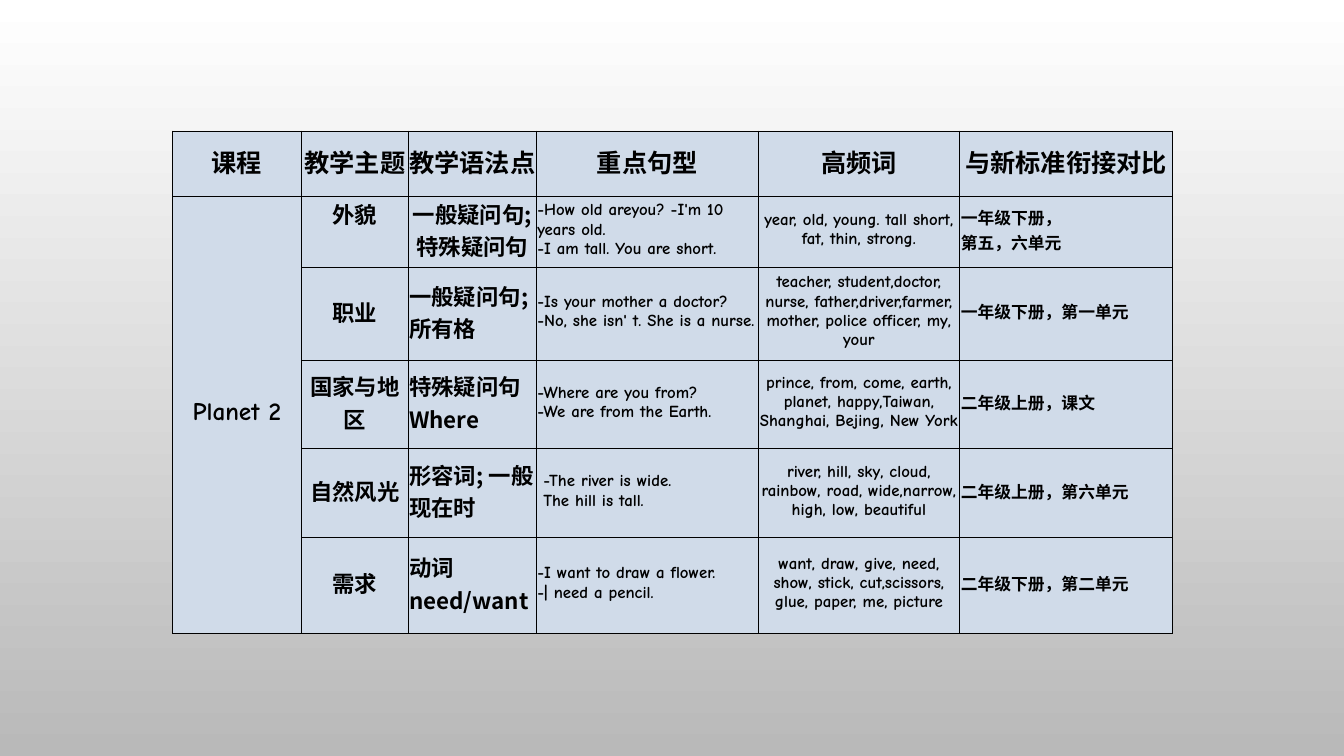
import dataclasses

import lxml.etree
import pptx
import pptx.dml.color
import pptx.enum.text
import pptx.oxml.ns
import pptx.util

Inches = pptx.util.Inches
Align = pptx.enum.text.PP_ALIGN
Anchor = pptx.enum.text.MSO_ANCHOR
qn = pptx.oxml.ns.qn


def rgb(value):
    return pptx.dml.color.RGBColor.from_string(value)


@dataclasses.dataclass(frozen=True)
class Theme:
    background: tuple = ("FFFFFF", "B9B9B9")
    cell: str = "D0DBE9"
    ink: str = "000000"
    chinese: str = "Noto Sans CJK SC"
    english: str = "Comic Neue"
    heading: int = 18
    topic: int = 16
    detail: int = 12
    border: float = 0.5


@dataclasses.dataclass(frozen=True)
class TextStyle:
    font: str
    size: int
    align: Align = Align.LEFT
    anchor: Anchor = Anchor.MIDDLE
    indent: float = 0


class SlideBuilder:
    def __init__(self, slide, theme):
        self.slide = slide
        self.theme = theme

    def background(self):
        fill = self.slide.background.fill
        fill.gradient()
        fill.gradient_angle = 270
        for stop, position, color in zip(fill.gradient_stops, (0, 1), self.theme.background):
            stop.position = position
            stop.color.rgb = rgb(color)

    def table(self, left, top, widths, heights):
        frame = self.slide.shapes.add_table(
            len(heights), len(widths), Inches(left), Inches(top),
            Inches(sum(widths)), Inches(sum(heights)))
        grid = frame.table
        grid.first_row = grid.horz_banding = False
        for column, width in zip(grid.columns, widths):
            column.width = Inches(width)
        for row, height in zip(grid.rows, heights):
            row.height = Inches(height)
        for cell in grid.iter_cells():
            cell.fill.solid()
            cell.fill.fore_color.rgb = rgb(self.theme.cell)
            cell.margin_left = cell.margin_right = cell.margin_top = Inches(0.01)
            cell.margin_bottom = Inches(0.05)
            self.borders(cell)
        return grid

    def borders(self, cell):
        properties = cell._tc.get_or_add_tcPr()
        for place, side in enumerate(("a:lnL", "a:lnR", "a:lnT", "a:lnB")):
            line = lxml.etree.Element(qn(side), w=str(pptx.util.Pt(self.theme.border)))
            solid = lxml.etree.SubElement(line, qn("a:solidFill"))
            lxml.etree.SubElement(solid, qn("a:srgbClr"), val=self.theme.ink)
            properties.insert(place, line)

    def cell_text(self, cell, lines, style):
        cell.vertical_anchor = style.anchor
        frame = cell.text_frame
        for number, line in enumerate(lines):
            paragraph = frame.add_paragraph() if number else frame.paragraphs[0]
            paragraph.alignment = style.align
            if style.indent:
                paragraph._p.get_or_add_pPr().set("marL", str(Inches(style.indent)))
            run = paragraph.add_run()
            run.text = line
            run.font.size = pptx.util.Pt(style.size)
            run.font.bold = True
            run.font.color.rgb = rgb(self.theme.ink)
            run.font.name = style.font
            lxml.etree.SubElement(run._r.get_or_add_rPr(), qn("a:ea"), typeface=style.font)


HEADINGS = ["课程", "教学主题", "教学语法点", "重点句型", "高频词", "与新标准衔接对比"]

# Topic, grammar, sentences, frequent words, matching textbook units
LESSONS = [
    (["外貌"], ["一般疑问句;特殊疑问句"],
     ["-How old areyou? -I'm 10 years old.", "-I am tall. You are short."],
     ["year, old, young. tall short, fat, thin, strong."],
     ["一年级下册，", "第五，六单元"]),
    (["职业"], ["一般疑问句;所有格"],
     ["-Is your mother a doctor?", "-No, she isn' t. She is a nurse."],
     ["teacher, student,doctor, nurse, father,driver,farmer, mother, police officer, my, your"],
     ["一年级下册，第一单元"]),
    (["国家与地区"], ["特殊疑问句 Where"],
     ["-Where are you from?", "-We are from the Earth."],
     ["prince, from, come, earth, planet, happy,Taiwan, Shanghai, Bejing, New York"],
     ["二年级上册，课文"]),
    (["自然风光"], ["形容词; 一般现在时"],
     ["-The river is wide.", "The hill is tall."],
     ["river, hill, sky, cloud, rainbow, road, wide,narrow, high, low, beautiful"],
     ["二年级上册，第六单元"]),
    (["需求"], ["动词need/want"],
     ["-I want to draw a flower.", "-| need a pencil."],
     ["want, draw, give, need, show, stick, cut,scissors, glue, paper, me, picture"],
     ["二年级下册，第二单元"]),
]


def main():
    theme = Theme()
    deck = pptx.Presentation()
    deck.slide_width, deck.slide_height = Inches(13.33), Inches(7.5)
    builder = SlideBuilder(deck.slides.add_slide(deck.slide_layouts[6]), theme)
    builder.background()

    # Table grid
    syllabus = builder.table(1.71, 1.3, [1.28, 1.06, 1.27, 2.2, 2, 2.11],
                             [0.65, 0.7, 0.92, 0.88, 0.88, 0.95])

    # Heading row
    heading = TextStyle(theme.chinese, theme.heading, Align.CENTER)
    for column, title in enumerate(HEADINGS):
        builder.cell_text(syllabus.cell(0, column), [title], heading)

    # Course name spanning all lessons
    course = syllabus.cell(1, 0)
    course.merge(syllabus.cell(len(LESSONS), 0))
    builder.cell_text(course, ["Planet 2"], dataclasses.replace(heading, font=theme.english))

    # Lesson rows
    column_styles = [
        TextStyle(theme.chinese, theme.topic, Align.CENTER),
        TextStyle(theme.chinese, theme.topic),
        TextStyle(theme.english, theme.detail),
        TextStyle(theme.english, theme.detail, Align.CENTER),
        TextStyle(theme.chinese, theme.detail),
    ]
    exceptions = {
        (1, 1): {"anchor": Anchor.TOP},
        (1, 2): {"align": Align.CENTER},
        (4, 3): {"indent": 0.06},
    }
    for row, lesson in enumerate(LESSONS, start=1):
        for column, (lines, style) in enumerate(zip(lesson, column_styles), start=1):
            changes = exceptions.get((row, column), {})
            builder.cell_text(syllabus.cell(row, column), lines,
                              dataclasses.replace(style, **changes))

    deck.save("out.pptx")


if __name__ == "__main__":
    main()
